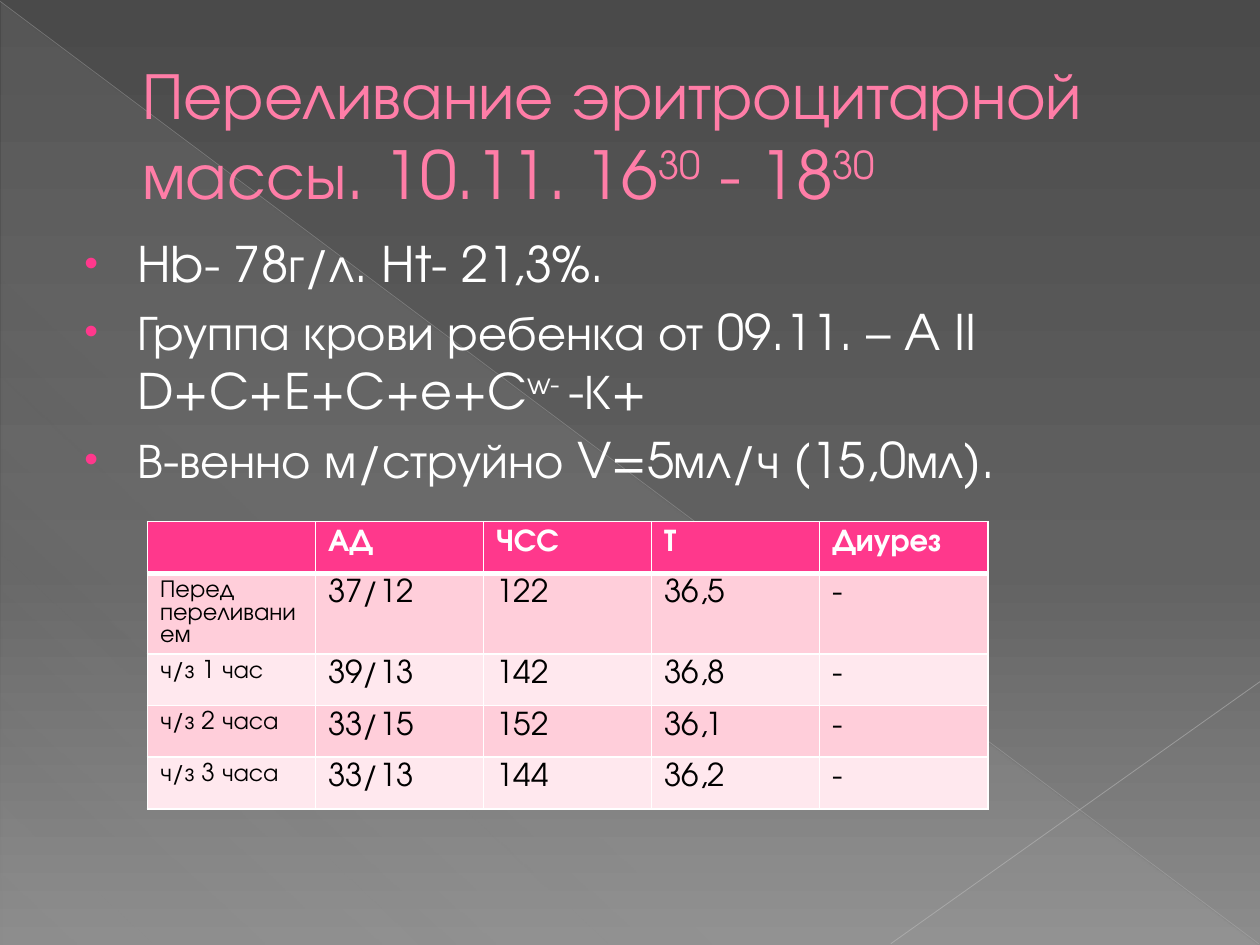
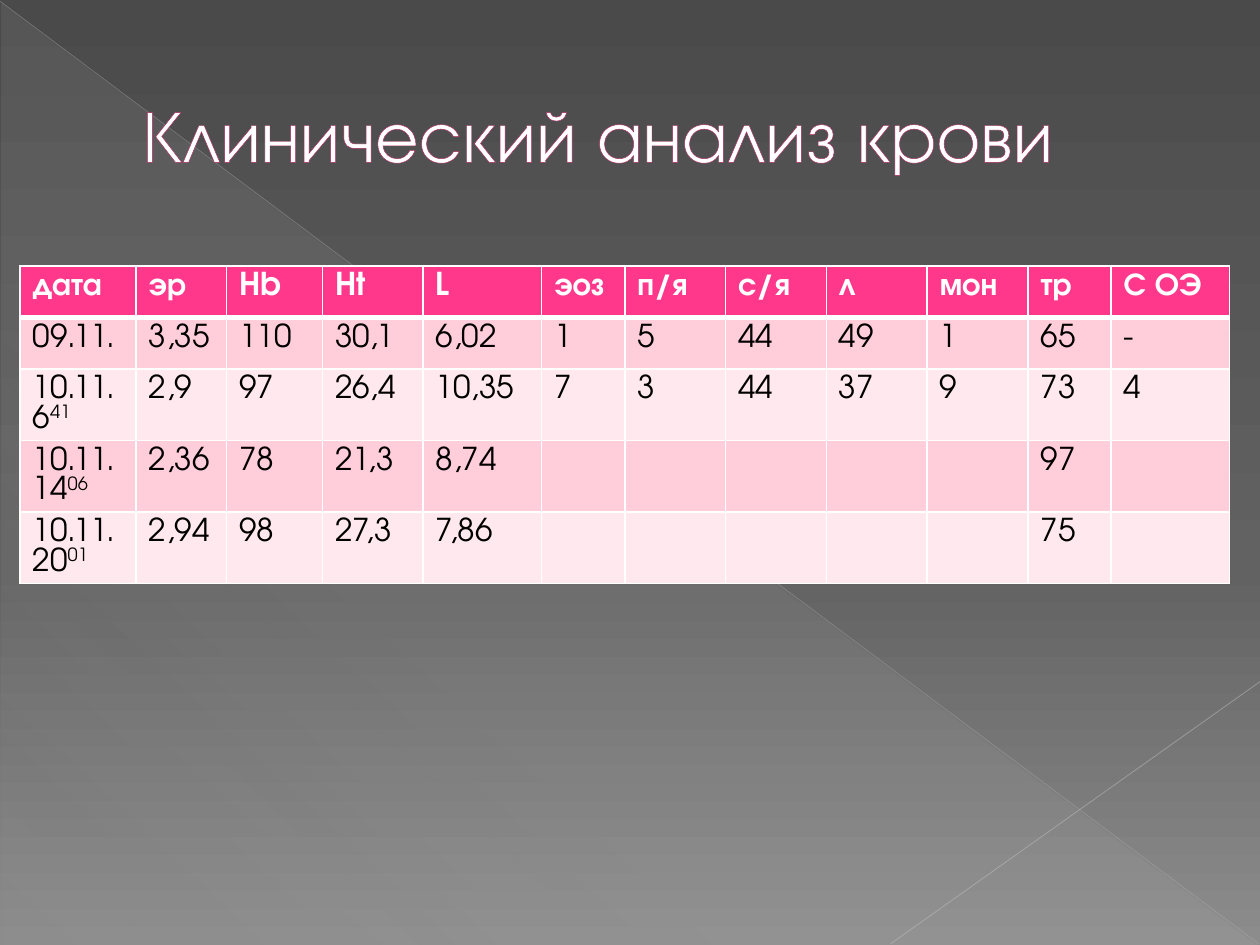
import pptx
import pptx.util
import pptx.dml.color
import pptx.enum.shapes
import pptx.enum.text
import pptx.oxml
import pptx.oxml.ns

Inches = pptx.util.Inches
Pt = pptx.util.Pt
RGBColor = pptx.dml.color.RGBColor
qn = pptx.oxml.ns.qn

# Text between carets is raised: "16^30^".
TRANSFUSION_TITLE = "Переливание эритроцитарной массы. 10.11. 16^30^ - 18^30^"
TRANSFUSION_NOTES = [
    "Hb- 78г/л. Ht- 21,3%.",
    "Группа крови ребенка от 09.11. – A II D+C+E+C+e+C^w- ^-К+",
    "В-венно м/струйно V=5мл/ч (15,0мл).",
]
VITALS = [
    ["", "АД", "ЧСС", "Т", "Диурез"],
    ["Перед переливанием", "37/12", "122", "36,5", "-"],
    ["ч/з 1 час", "39/13", "142", "36,8", "-"],
    ["ч/з 2 часа", "33/15", "152", "36,1", "-"],
    ["ч/з 3 часа", "33/13", "144", "36,2", "-"],
]
VITALS_COLUMNS = [6.67 / 5] * 5

BLOOD_TITLE = "Клинический анализ крови"
BLOOD_TESTS = [
    ["дата", "эр", "Hb", "Ht", "L", "эоз", "п/я", "с/я", "л", "мон", "тр", "С ОЭ"],
    ["09.11.", "3,35", "110", "30,1", "6,02", "1", "5", "44", "49", "1", "65", "-"],
    ["10.11.\n6^41^", "2,9", "97", "26,4", "10,35", "7", "3", "44", "37", "9", "73", "4"],
    ["10.11.\n14^06^", "2,36", "78", "21,3", "8,74", "", "", "", "", "", "97", ""],
    ["10.11.\n20^01^", "2,94", "98", "27,3", "7,86", "", "", "", "", "", "75", ""],
]
BLOOD_COLUMNS = [0.92, 0.72, 0.76, 0.8, 0.94, 0.66, 0.8, 0.8, 0.8, 0.8, 0.66, 0.94]

FONT = "TeX Gyre Adventor"
WHITE = RGBColor(0xFF, 0xFF, 0xFF)
BLACK = RGBColor(0x00, 0x00, 0x00)
PINK = RGBColor(0xFF, 0x38, 0x8C)
TITLE_PINK = RGBColor(0xFF, 0x7D, 0xA7)
OUTLINE_PINK = RGBColor(0xB1, 0x27, 0x61)
BAND_DARK = RGBColor(0xFF, 0xCE, 0xDA)
BAND_LIGHT = RGBColor(0xFF, 0xE8, 0xEE)
VEIL = RGBColor(0xD2, 0xD2, 0xD2)
LONG_LINE = RGBColor(0xBF, 0xBF, 0xBF)
SHORT_LINE = RGBColor(0xC6, 0xC6, 0xC6)
BACKDROP_STOPS = [
    (0, RGBColor(0x4A, 0x4A, 0x4A), 100),
    (60, RGBColor(0x62, 0x62, 0x62), 100),
    (100, RGBColor(0x8C, 0x8C, 0x8C), 100),
]
VEIL_STOPS = [(0, VEIL, 10), (70, VEIL, 8), (100, VEIL, 1)]

SLIDE_WIDTH, SLIDE_HEIGHT = 10, 7.5
TITLE_BOX = (0.5, 0.29, 9, 1.53)
BODY_BOX = (0.5, 1.8, 9, 5.26)
ROW_HEIGHT = 0.41


def add_element(parent, tag, index=None, **attributes):
    element = pptx.oxml.parse_xml(f'<{tag} {pptx.oxml.ns.nsdecls("a")}/>')
    for name, value in attributes.items():
        element.set(name, str(value))
    parent.insert(len(parent) if index is None else index, element)
    return element


def add_color(parent, color, opacity=100):
    element = add_element(parent, "a:srgbClr", val=color)
    if opacity < 100:
        add_element(element, "a:alpha", val=opacity * 1000)


def fill_gradient(fill, stops, angle):
    """Replace the two default stops by any number, with opacity in percent."""
    fill.gradient()
    stop_list = fill.gradient_stops[0]._gs.getparent()
    for stop in list(stop_list):
        stop_list.remove(stop)
    for position, color, opacity in stops:
        add_color(add_element(stop_list, "a:gs", pos=position * 1000), color, opacity)
    linear = stop_list.getparent().find(qn("a:lin"))
    linear.set("ang", str(angle * 60000))


def place(shape, box):
    shape.left, shape.top, shape.width, shape.height = map(Inches, box)


def write_runs(paragraph, text, size, color, bold=False):
    for index, part in enumerate(text.split("^")):
        if not part:
            continue
        run = paragraph.add_run()
        run.text = part
        run.font.name = FONT
        run.font.size = Pt(size)
        run.font.bold = bold
        run.font.color.rgb = color
        if index % 2:
            run._r.get_or_add_rPr().set("baseline", "30000")


def set_indent(paragraph, margin, first_line):
    properties = paragraph._p.get_or_add_pPr()
    properties.set("marL", str(Inches(margin)))
    properties.set("indent", str(Inches(first_line)))
    return properties


def add_thin_line(slide, start, end, color, width, opacity):
    line = slide.shapes.add_connector(
        pptx.enum.shapes.MSO_CONNECTOR.STRAIGHT, *map(Inches, start + end))
    line.line.color.rgb = color
    line.line.width = Pt(width)
    line_color = line._element.spPr.find(".//" + qn("a:srgbClr"))
    add_element(line_color, "a:alpha", val=opacity * 1000)
    add_element(line._element.spPr, "a:effectLst")
    return line


def add_backdrop(slide):
    """Lay the translucent triangle and the two diagonals behind everything."""
    triangle = slide.shapes.add_shape(
        pptx.enum.shapes.MSO_SHAPE.RIGHT_TRIANGLE,
        *map(Inches, (0.01, 0.02, SLIDE_WIDTH - 0.02, SLIDE_HEIGHT - 0.02)))
    triangle.shadow.inherit = False
    triangle.line.fill.background()
    fill_gradient(triangle.fill, VEIL_STOPS, 133)
    bottom = SLIDE_HEIGHT - 0.01
    parts = [
        triangle,
        add_thin_line(slide, (0, 0.01), (SLIDE_WIDTH - 0.01, bottom), LONG_LINE, 0.39, 35),
        add_thin_line(slide, (SLIDE_WIDTH, 5.41), (7.07, bottom), SHORT_LINE, 0.47, 45),
    ]
    for index, part in enumerate(parts):
        slide.shapes._spTree.insert(2 + index, part._element)


def add_slide(presentation, layout_name, title, size, color):
    slide = presentation.slides.add_slide(
        presentation.slide_layouts.get_by_name(layout_name))
    add_backdrop(slide)
    place(slide.shapes.title, TITLE_BOX)
    frame = slide.shapes.title.text_frame
    frame.auto_size = pptx.enum.text.MSO_AUTO_SIZE.NONE
    frame.vertical_anchor = pptx.enum.text.MSO_ANCHOR.MIDDLE
    paragraph = frame.paragraphs[0]
    paragraph.alignment = pptx.enum.text.PP_ALIGN.LEFT
    set_indent(paragraph, 0.53, 0)
    write_runs(paragraph, title, size, color)
    for run in paragraph.runs:
        outline = add_element(run._r.get_or_add_rPr(), "a:ln", index=0, w=Pt(0.5))
        add_color(add_element(outline, "a:solidFill"), OUTLINE_PINK)
    return slide


def add_bullets(slide, items):
    body = slide.placeholders[1]
    place(body, BODY_BOX)
    frame = body.text_frame
    frame.auto_size = pptx.enum.text.MSO_AUTO_SIZE.NONE
    for index, item in enumerate(items):
        paragraph = frame.add_paragraph() if index else frame.paragraphs[0]
        properties = set_indent(paragraph, 0.49, -0.42)
        add_color(add_element(properties, "a:buClr"), PINK)
        add_element(properties, "a:buSzPct", val=80000)
        add_element(properties, "a:buFont", typeface="Arial")
        add_element(properties, "a:buChar", char="•")
        write_runs(paragraph, item, 28, WHITE)


def set_borders(cell, top, bottom):
    properties = cell._tc.get_or_add_tcPr()
    sides = [("a:lnL", 1), ("a:lnR", 1), ("a:lnT", top), ("a:lnB", bottom)]
    for index, (tag, width) in enumerate(sides):
        border = add_element(properties, tag, index=index, w=Pt(width))
        add_color(add_element(border, "a:solidFill"), WHITE)


def add_banded_table(slide, rows, columns, left, top, label_size=18):
    table = slide.shapes.add_table(
        len(rows), len(columns), Inches(left), Inches(top),
        Inches(sum(columns)), Inches(ROW_HEIGHT * len(rows))).table
    for column, width in zip(table.columns, columns):
        column.width = Inches(width)
    for row_index, row in enumerate(rows):
        table.rows[row_index].height = Inches(ROW_HEIGHT)
        header = row_index == 0
        band = PINK if header else BAND_DARK if row_index % 2 else BAND_LIGHT
        for column_index, text in enumerate(row):
            cell = table.cell(row_index, column_index)
            cell.fill.solid()
            cell.fill.fore_color.rgb = band
            set_borders(cell, 3 if row_index == 1 else 1, 3 if header else 1)
            size = label_size if column_index == 0 else 18
            frame = cell.text_frame
            for line_index, line in enumerate(text.split("\n")):
                paragraph = frame.add_paragraph() if line_index else frame.paragraphs[0]
                write_runs(paragraph, line, size, WHITE if header else BLACK, header)


def main():
    presentation = pptx.Presentation()
    presentation.slide_width = Inches(SLIDE_WIDTH)
    presentation.slide_height = Inches(SLIDE_HEIGHT)
    fill_gradient(presentation.slide_master.background.fill, BACKDROP_STOPS, 90)

    transfusion = add_slide(
        presentation, "Title and Content", TRANSFUSION_TITLE, 37.8, TITLE_PINK)
    add_bullets(transfusion, TRANSFUSION_NOTES)
    add_banded_table(transfusion, VITALS, VITALS_COLUMNS, 1.17, 4.14, label_size=14)

    blood = add_slide(presentation, "Title Only", BLOOD_TITLE, 42, WHITE)
    add_banded_table(blood, BLOOD_TESTS, BLOOD_COLUMNS, 0.16, 2.11)

    presentation.save("out.pptx")


if __name__ == "__main__":
    main()
